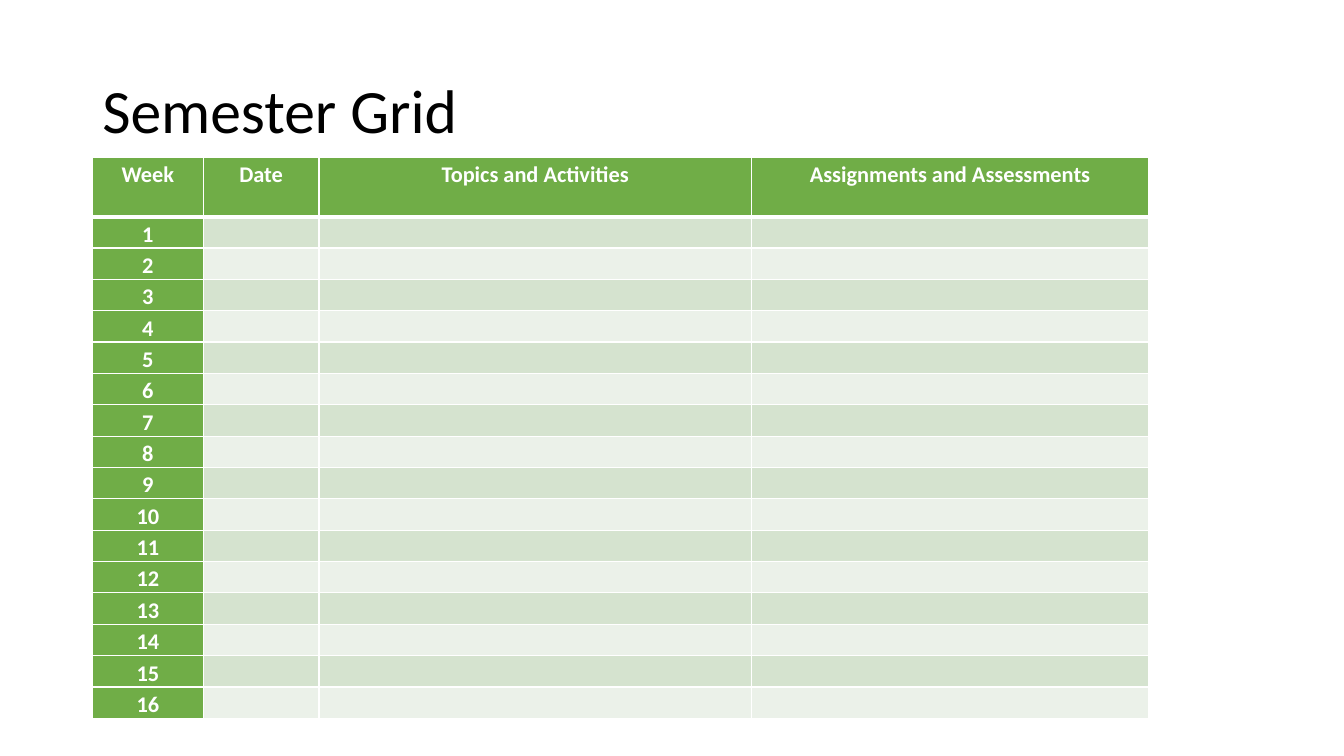
from lxml import etree
from pptx import Presentation
from pptx import util as u
from pptx.dml.color import RGBColor
from pptx.enum import text
from pptx.oxml import ns

# Content
TITLE = "Semester Grid"
HEADINGS = ["Week", "Date", "Topics and Activities", "Assignments and Assessments"]
WEEKS = 16
COLUMN_WIDTHS = [2.79, 2.92, 10.9, 10.01]
HEADING_HEIGHT, WEEK_HEIGHT = 1.5, 0.79
FONT = "Calibri"
GREEN, BANDS, WHITE, BLACK = "70AD47", ["EBF1E9", "D5E3CF"], "FFFFFF", "000000"


def color(hex_code):
    return RGBColor.from_string(hex_code)


def style(paragraph, size, hex_code, bold, spacing):
    paragraph.line_spacing = spacing
    font = paragraph.font
    font.name, font.size, font.bold = FONT, u.Pt(size), bold
    font.color.rgb = color(hex_code)


def add_border(cell, side, points):
    line = etree.SubElement(cell._tc.get_or_add_tcPr(), ns.qn(f"a:ln{side}"),
                            w=str(u.Pt(points)))
    fill = etree.SubElement(line, ns.qn("a:solidFill"))
    etree.SubElement(fill, ns.qn("a:srgbClr"), val=WHITE)


def fill_cell(cell, row, column):
    cell.margin_left = cell.margin_right = u.Cm(0.23)
    cell.margin_top = cell.margin_bottom = 0
    # Thick rule between the headings and the first week
    for side in "LRTB":
        thick = (row, side) in [(0, "B"), (1, "T")]
        add_border(cell, side, 3 if thick else 1)
    is_label = row == 0 or column == 0
    cell.fill.solid()
    cell.fill.fore_color.rgb = color(GREEN if is_label else BANDS[row % 2])
    if is_label:
        cell.text = HEADINGS[column] if row == 0 else str(row)
        label = cell.text_frame.paragraphs[0]
        label.alignment = text.PP_ALIGN.CENTER
        style(label, 16, WHITE, True, 1.15)


def main():
    deck = Presentation()
    deck.slide_width, deck.slide_height = u.Cm(33.87), u.Cm(19.05)
    slide = deck.slides.add_slide(deck.slide_layouts[6])

    # Title
    title = slide.shapes.add_textbox(u.Cm(2.33), u.Cm(1.02), u.Cm(29.21), u.Cm(3.68)).text_frame
    title.word_wrap = True
    title.vertical_anchor = text.MSO_ANCHOR.MIDDLE
    title.text = TITLE
    style(title.paragraphs[0], 44, BLACK, False, 0.9)

    # Semester table
    heights = [HEADING_HEIGHT] + [WEEK_HEIGHT] * WEEKS
    semester = slide.shapes.add_table(
        len(heights), len(HEADINGS), u.Cm(2.33), u.Cm(3.96),
        u.Cm(sum(COLUMN_WIDTHS)), u.Cm(sum(heights))).table
    semester.first_col = True
    for column, width in zip(semester.columns, COLUMN_WIDTHS):
        column.width = u.Cm(width)
    for row, height in enumerate(heights):
        semester.rows[row].height = u.Cm(height)
        for column in range(len(HEADINGS)):
            fill_cell(semester.cell(row, column), row, column)

    deck.save("out.pptx")


if __name__ == "__main__":
    main()
